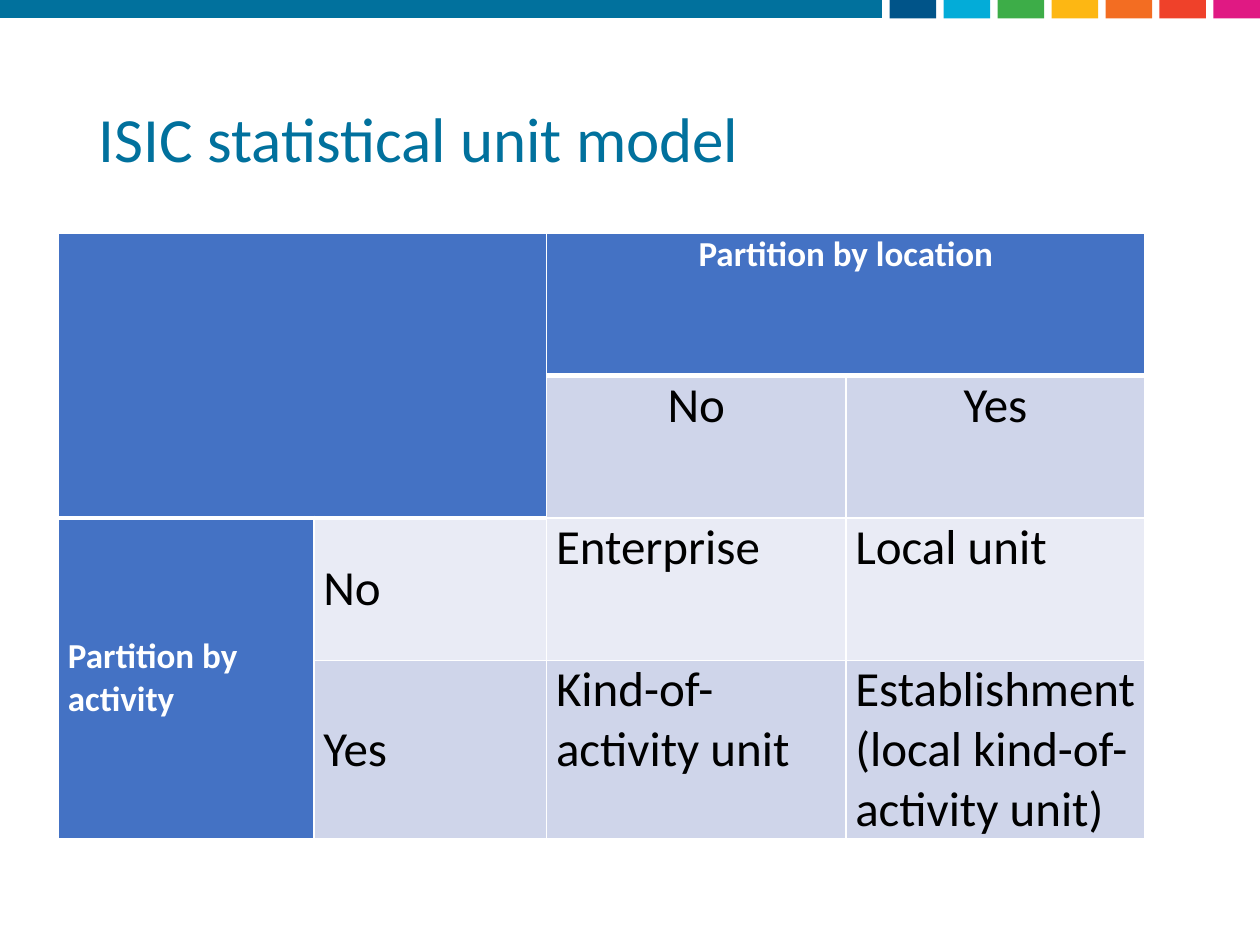
from pptx import Presentation
from pptx.dml.color import RGBColor
from pptx.enum.shapes import MSO_SHAPE as Shape
from pptx.enum.text import MSO_ANCHOR as Anchor, PP_ALIGN as Align
from pptx.oxml import parse_xml
from pptx.oxml.ns import nsdecls
from pptx.util import Pt

COLORS = {
    "teal": "01719D", "navy": "005489", "sky": "03ACD8", "green": "3DAD48",
    "yellow": "FDB713", "orange": "F36D22", "red": "EF412A", "pink": "E01983",
    "header": "4472C4", "band": "CFD5EA", "light": "E9EBF5",
    "white": "FFFFFF", "black": "000000",
}
TITLE = "ISIC statistical unit model"
STRIPES = ["navy", "sky", "green", "yellow", "orange", "red", "pink"]
STRIPE_LEFT, STRIPE_STEP, STRIPE_WIDTH = 508.4, 30.84, 26.6

TABLE_LEFT, TABLE_TOP = 33.4, 133.2
COLUMN_WIDTHS = [146, 133, 171, 171]
ROW_HEIGHTS = [81.4, 81.4, 81.4, 102]
UNIT_MODEL = [
    ["", "", "Partition by location", ""],
    ["", "", "No", "Yes"],
    ["Partition by activity", "No", "Enterprise", "Local unit"],
    ["", "Yes", "Kind-of-activity unit",
     "Establishment (local kind-of-activity unit)"],
]
FILLS = [
    ["header", "header", "header", "header"],
    ["header", "header", "band", "band"],
    ["header", "light", "light", "light"],
    ["header", "band", "band", "band"],
]
MERGES = [((0, 0), (1, 1)), ((0, 2), (0, 3)), ((2, 0), (3, 0))]
HEADER_ROWS = LABEL_COLUMNS = 2


def color(name):
    return RGBColor.from_string(COLORS[name])


def write(frame, text, size, ink, bold=False, align=Align.LEFT,
          after=0, line_spacing=None):
    frame.word_wrap = True
    paragraph = frame.paragraphs[0]
    paragraph.alignment = align
    paragraph.space_after = Pt(after)
    if line_spacing:
        paragraph.line_spacing = line_spacing
    run = paragraph.add_run()
    run.text = text
    run.font.name = "Calibri"
    run.font.size = Pt(size)
    run.font.bold = bold
    run.font.color.rgb = color(ink)


def add_bar(slide, left, width, height, fill):
    bar = slide.shapes.add_shape(
        Shape.RECTANGLE, Pt(left), Pt(0), Pt(width), Pt(height))
    bar.shadow.inherit = False
    bar.fill.solid()
    bar.fill.fore_color.rgb = color(fill)
    bar.line.fill.background()


def add_borders(cell, top, bottom):
    """Draw white borders; top and bottom are widths in points."""
    for side, width in (("L", 1), ("R", 1), ("T", top), ("B", bottom)):
        cell._tc.get_or_add_tcPr().append(parse_xml(
            f'<a:ln{side} {nsdecls("a")} w="{Pt(width)}"><a:solidFill>'
            f'<a:srgbClr val="{COLORS["white"]}"/></a:solidFill></a:ln{side}>'))


def is_header(row, column):
    return 0 <= row < HEADER_ROWS and FILLS[row][column] == "header"


def add_unit_table(slide):
    table = slide.shapes.add_table(
        len(ROW_HEIGHTS), len(COLUMN_WIDTHS), Pt(TABLE_LEFT), Pt(TABLE_TOP),
        Pt(sum(COLUMN_WIDTHS)), Pt(sum(ROW_HEIGHTS))).table
    table.first_row = table.horz_banding = False
    for column, width in zip(table.columns, COLUMN_WIDTHS):
        column.width = Pt(width)
    for row, height in zip(table.rows, ROW_HEIGHTS):
        row.height = Pt(height)
    for first, last in MERGES:
        table.cell(*first).merge(table.cell(*last))

    for r, texts in enumerate(UNIT_MODEL):
        for c, text in enumerate(texts):
            cell = table.cell(r, c)
            cell.margin_left = cell.margin_right = Pt(5.4)
            cell.margin_top = cell.margin_bottom = Pt(0)
            add_borders(cell, top=3 if is_header(r - 1, c) else 1,
                        bottom=3 if is_header(r, c) else 1)
            cell.fill.solid()
            cell.fill.fore_color.rgb = color(FILLS[r][c])
            if not text:
                continue
            label = FILLS[r][c] == "header"
            side_label = r >= HEADER_ROWS and c < LABEL_COLUMNS
            cell.vertical_anchor = Anchor.MIDDLE if side_label else Anchor.TOP
            write(cell.text_frame, text, size=20 if label else 28,
                  ink="white" if label else "black", bold=label,
                  align=Align.CENTER if r < HEADER_ROWS else Align.LEFT,
                  after=0 if label and side_label else 3)


def main():
    deck = Presentation()
    deck.slide_width, deck.slide_height = Pt(720), Pt(540)
    slide = deck.slides.add_slide(deck.slide_layouts[6])

    add_bar(slide, 0, 504, 10.2, "teal")
    for i, stripe in enumerate(STRIPES):
        add_bar(slide, STRIPE_LEFT + i * STRIPE_STEP, STRIPE_WIDTH, 10.5, stripe)

    title = slide.shapes.add_textbox(Pt(49.5), Pt(28.8), Pt(621), Pt(104.4))
    title.text_frame.vertical_anchor = Anchor.MIDDLE
    write(title.text_frame, TITLE, size=36, ink="teal", line_spacing=0.9)

    add_unit_table(slide)
    deck.save("out.pptx")


if __name__ == "__main__":
    main()
